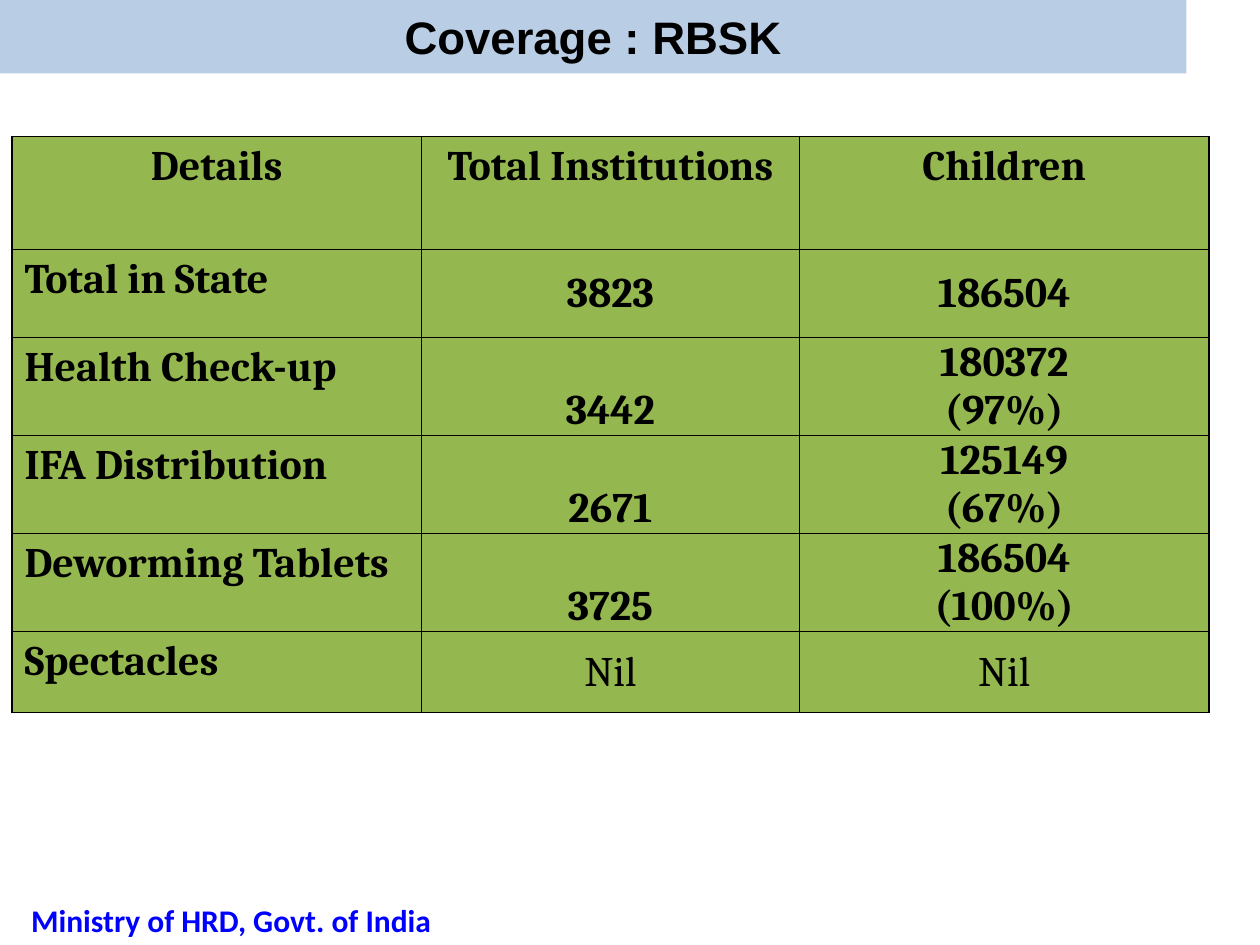
from lxml.etree import SubElement
from pptx import Presentation
from pptx.dml.color import RGBColor
from pptx.enum.shapes import MSO_SHAPE
from pptx.enum.text import MSO_ANCHOR, MSO_AUTO_SIZE, PP_ALIGN
from pptx.oxml.ns import qn
from pptx.util import Pt

BLACK = RGBColor(0x00, 0x00, 0x00)
BLUE = RGBColor(0x00, 0x00, 0xFF)
PALE_BLUE = RGBColor(0xB9, 0xCD, 0xE5)
GREEN = RGBColor(0x95, 0xB7, 0x4F)

HEADINGS = ["Details", "Total Institutions", "Children"]
COVERAGE = [
    ("Total in State", "3823", "186504", MSO_ANCHOR.MIDDLE, True),
    ("Health Check-up", "3442", "180372\n(97%)", MSO_ANCHOR.BOTTOM, True),
    ("IFA Distribution", "2671", "125149\n(67%)", MSO_ANCHOR.BOTTOM, True),
    ("Deworming Tablets", "3725", "186504\n(100%)", MSO_ANCHOR.BOTTOM, True),
    ("Spectacles", "Nil", "Nil", MSO_ANCHOR.MIDDLE, False),
]
COLUMN_WIDTHS = [234, 216, 234]
ROW_HEIGHTS = [64.6, 50.3, 56, 56, 56, 46.3]


def write(frame, text, font="Cambria", size=24, color=BLACK, bold=True,
          align=PP_ALIGN.CENTER):
    for index, line in enumerate(text.split("\n")):
        paragraph = frame.add_paragraph() if index else frame.paragraphs[0]
        paragraph.alignment = align
        run = paragraph.add_run()
        run.text = line
        run.font.name = font
        run.font.size = Pt(size)
        run.font.bold = bold
        run.font.color.rgb = color


class CoverageSlide:
    def __init__(self, slide, cell_fill, border_color, border_width):
        self.slide = slide
        self.cell_fill = cell_fill
        self.border_color = border_color
        self.border_width = border_width

    def banner(self, text, left, top, width, height, fill, **style):
        banner = self.slide.shapes.add_shape(
            MSO_SHAPE.RECTANGLE, Pt(left), Pt(top), Pt(width), Pt(height))
        banner.shadow.inherit = False
        banner.fill.solid()
        banner.fill.fore_color.rgb = fill
        banner.line.fill.background()
        banner.text_frame.vertical_anchor = MSO_ANCHOR.MIDDLE
        write(banner.text_frame, text, **style)

    def label(self, text, left, top, width, height, **style):
        label = self.slide.shapes.add_textbox(
            Pt(left), Pt(top), Pt(width), Pt(height))
        label.text_frame.word_wrap = False
        label.text_frame.auto_size = MSO_AUTO_SIZE.SHAPE_TO_FIT_TEXT
        write(label.text_frame, text, **style)

    def table(self, left, top, widths, heights):
        table = self.slide.shapes.add_table(
            len(heights), len(widths), Pt(left), Pt(top),
            Pt(sum(widths)), Pt(sum(heights))).table
        for column, width in zip(table.columns, widths):
            column.width = Pt(width)
        for row, height in zip(table.rows, heights):
            row.height = Pt(height)
        return table

    def cell(self, cell, text, anchor=MSO_ANCHOR.TOP,
             margins=(7.2, 3.6, 7.2, 3.6), **style):
        cell.vertical_anchor = anchor
        (cell.margin_left, cell.margin_top,
         cell.margin_right, cell.margin_bottom) = map(Pt, margins)
        write(cell.text_frame, text, **style)
        self.borders(cell)
        cell.fill.solid()
        cell.fill.fore_color.rgb = self.cell_fill

    def borders(self, cell):
        properties = cell._tc.get_or_add_tcPr()
        for side in ("a:lnL", "a:lnR", "a:lnT", "a:lnB"):
            border = SubElement(properties, qn(side), w=str(Pt(self.border_width)))
            fill = SubElement(border, qn("a:solidFill"))
            SubElement(fill, qn("a:srgbClr"), val=str(self.border_color))


def main():
    presentation = Presentation()
    presentation.slide_width = Pt(720)
    presentation.slide_height = Pt(540)
    slide = presentation.slides.add_slide(presentation.slide_layouts[6])
    page = CoverageSlide(slide, GREEN, BLACK, 1)

    page.banner("Coverage : RBSK", 0, 0, 678, 42, PALE_BLUE,
                font="Arial", size=26)

    table = page.table(6.8, 78, COLUMN_WIDTHS, ROW_HEIGHTS)
    for column, heading in enumerate(HEADINGS):
        page.cell(table.cell(0, column), heading)
    for row, (detail, institutions, children, anchor, bold) in enumerate(COVERAGE, 1):
        page.cell(table.cell(row, 0), detail, align=PP_ALIGN.LEFT)
        for column, figure in enumerate((institutions, children), 1):
            page.cell(table.cell(row, column), figure, anchor,
                      (0.75, 0.75, 0.75, 0), bold=bold)

    page.label("Ministry of HRD, Govt. of India", 9.4, 511.2, 245.5, 28.8,
               font="Calibri", size=18, color=BLUE)

    presentation.save("out.pptx")


if __name__ == "__main__":
    main()
